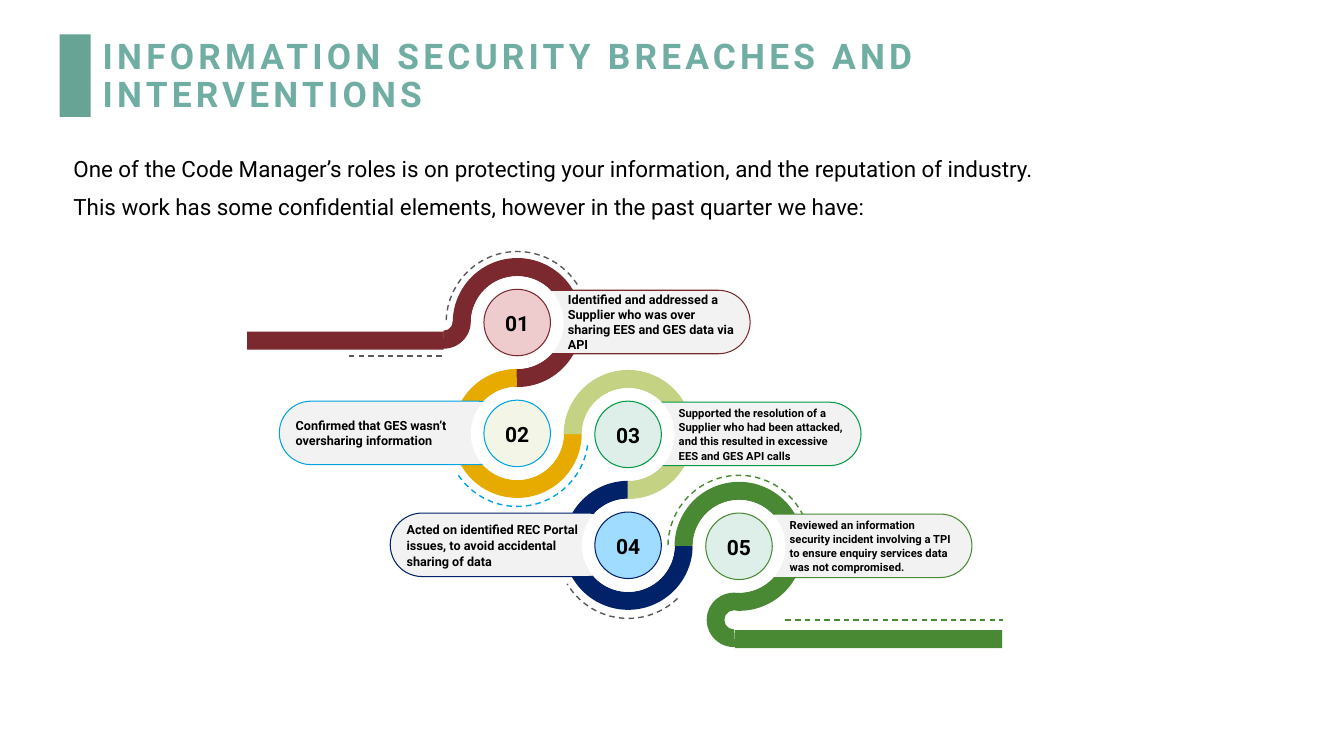
from lxml.etree import SubElement
from pptx import Presentation
from pptx.dml.color import RGBColor
from pptx.enum.dml import MSO_LINE
from pptx.enum.shapes import MSO_CONNECTOR, MSO_SHAPE
from pptx.enum.text import MSO_ANCHOR, PP_ALIGN
from pptx.oxml.ns import qn
from pptx.util import Inches, Pt

BLACK = RGBColor(0x00, 0x00, 0x00)
WHITE = RGBColor(0xFF, 0xFF, 0xFF)
PALE = RGBColor(0xF2, 0xF2, 0xF2)
GREY = RGBColor(0x59, 0x59, 0x59)
TEAL = RGBColor(0x68, 0xA4, 0x95)
MINT = RGBColor(0x70, 0xAD, 0xA3)
WINE = RGBColor(0x7B, 0x28, 0x2E)
PINK = RGBColor(0xEE, 0xCB, 0xCD)
GOLD = RGBColor(0xE7, 0xAB, 0x00)
CREAM = RGBColor(0xF3, 0xF6, 0xE6)
SKY = RGBColor(0x00, 0xA3, 0xE0)
LIME = RGBColor(0xC4, 0xD3, 0x83)
GREEN = RGBColor(0x00, 0x9A, 0x44)
ICE = RGBColor(0xDD, 0xEF, 0xE8)
NAVY = RGBColor(0x01, 0x21, 0x69)
BLUE = RGBColor(0xA0, 0xDC, 0xFF)
MOSS = RGBColor(0x49, 0x89, 0x34)

TITLE = "INFORMATION SECURITY BREACHES AND INTERVENTIONS"
INTRO = [
    "One of the Code Manager’s roles is on protecting your information, "
    "and the reputation of industry.\u00a0",
    "This work has some confidential elements, however in the past quarter we have:",
]
# road, edge, disc, text size, line spacing, right inset of a left pill, text
STEPS = [
    (WINE, WINE, PINK, 9, 1, 0,
     "Identified and addressed a Supplier who was over sharing EES and GES data via API"),
    (GOLD, SKY, CREAM, 9, 1, 0.23,
     "Confirmed that GES wasn’t oversharing information"),
    (LIME, GREEN, ICE, 8, 1.06, 0,
     "Supported the resolution of a Supplier who had been attacked, "
     "and this resulted in excessive EES and GES API calls"),
    (NAVY, NAVY, BLUE, 9, 1.06, 0.3,
     "Acted on identified REC Portal issues, to avoid accidental sharing of data"),
    (MOSS, MOSS, ICE, 8, 1.06, 0,
     "Reviewed an information security incident involving a TPI "
     "to ensure enquiry services data was not compromised."),
]
# step, colour, start and end angle, shift down
DASHES = [(1, SKY, 8, 148, 0.02), (4, MOSS, 181, 333, 0),
          (0, GREY, 182, 331, 0), (3, GREY, 46, 149, 0.02)]


def style(item, values):
    for name, value in values.items():
        setattr(item, name, value)


def shape(slide, kind, box, fill=None, edge=None, width=0.75, adjust=()):
    part = slide.shapes.add_shape(kind, *map(Inches, box))
    part.shadow.inherit = False
    for i, value in enumerate(adjust):
        part.adjustments[i] = value
    if fill is None:
        part.fill.background()
    else:
        part.fill.solid()
        part.fill.fore_color.rgb = fill
    if edge is None:
        part.line.fill.background()
    else:
        part.line.color.rgb = edge
        part.line.width = Pt(width)
    return part


def round_box(cx, cy, size):
    """Square box around a centre."""
    return cx - size / 2, cy - size / 2, size, size


def turns(start, end):
    """Arc angles in degrees as adjustment values."""
    return start * 0.6, end * 0.6


def write(part, lines, size, color=BLACK, bold=True, spacing=1.0, gap=0,
          align=PP_ALIGN.LEFT, anchor=MSO_ANCHOR.MIDDLE, wrap=True, insets=None):
    frame = part.text_frame
    style(frame, {"word_wrap": wrap, "vertical_anchor": anchor})
    if insets:
        sides = ("margin_left", "margin_top", "margin_right", "margin_bottom")
        style(frame, dict(zip(sides, map(Inches, insets))))
    for i, line in enumerate(lines):
        para = frame.add_paragraph() if i else frame.paragraphs[0]
        style(para, {"alignment": align, "line_spacing": spacing,
                     "space_before": Pt(gap if i else 0)})
        run = para.add_run()
        run.text = line
        style(run.font, {"name": "Roboto", "size": Pt(size), "bold": bold})
        run.font.color.rgb = color
    return frame


def header(slide, box):
    x, y, w, h = box
    shape(slide, MSO_SHAPE.RECTANGLE, (x, y, 0.31, h), TEAL)
    label = slide.shapes.add_textbox(
        *map(Inches, (x + 0.33, y + 0.06, w - 0.33, 0.72)))
    frame = write(label, [TITLE], 25.2, MINT, spacing=0.9)
    run = frame.paragraphs[0].runs[0]
    run._r.get_or_add_rPr().set("spc", "300")


def intro(slide, box):
    label = slide.shapes.add_textbox(*map(Inches, box))
    write(label, INTRO, 16, bold=False, spacing=0.9, gap=10, anchor=MSO_ANCHOR.TOP)


def center(box, i):
    """Steps zigzag: down, then right, with a slight drop per column."""
    col, row = i // 2, (i + 1) // 2
    return box[0] + 2.68 + 1.1 * col, box[1] + 0.71 + 1.1 * row + 0.01 * col


def step(slide, box, i):
    road, edge, disc, size, spacing, inset, text = STEPS[i]
    cx, cy = center(box, i)
    left = i % 2 == 1
    arc = (*turns(0, 269.5), 0.138) if left else (*turns(180.4, 92.2), 0.141)
    shape(slide, MSO_SHAPE.BLOCK_ARC, round_box(cx, cy, 1.28), road, adjust=arc)
    px = cx - 2.36 if left else cx + 0.03
    pill = shape(slide, MSO_SHAPE.ROUNDED_RECTANGLE, (px, cy - 0.32, 2.28, 0.63),
                 PALE, edge, adjust=[0.5])
    insets = (0.07, 0.07, inset, 0.07) if left else (0.38, 0.07, 0.07, 0.07)
    write(pill, [text], size, spacing=spacing, insets=insets)
    shape(slide, MSO_SHAPE.OVAL, round_box(cx, cy, 0.92), WHITE)
    badge = shape(slide, MSO_SHAPE.OVAL, round_box(cx, cy, 0.66), disc, edge)
    write(badge, [f"{i + 1:02}"], 15, spacing=1.06, align=PP_ALIGN.CENTER,
          wrap=False, insets=[0.07] * 4)


def road_end(slide, box, color, bar, bend, arc):
    """Straight bar (left, top, width) and the bend (left, top) that joins it."""
    x, y = box[:2]
    shape(slide, MSO_SHAPE.RECTANGLE, (x + bar[0], y + bar[1], bar[2], 0.18), color)
    shape(slide, MSO_SHAPE.BLOCK_ARC, (x + bend[0], y + bend[1], 0.54, 0.54),
          color, adjust=arc)


def dash_line(slide, box, color, start, end, drop):
    x, y = box[:2]
    line = slide.shapes.add_connector(
        MSO_CONNECTOR.STRAIGHT,
        *map(Inches, (x + start, y + drop, x + end, y + drop)))
    line.line.color.rgb = color
    style(line.line, {"width": Pt(1), "dash_style": MSO_LINE.DASH})
    SubElement(line._element.spPr, qn("a:effectLst"))


def roadmap(slide, box):
    for i in range(len(STEPS)):
        step(slide, box, i)
    road_end(slide, box, WINE, (0, 0.8, 1.95), (1.68, 0.43),
             (*turns(356.4, 91.1), 0.331))
    road_end(slide, box, MOSS, (4.84, 3.76, 2.65), (4.56, 3.39),
             (*turns(87.6, 285.5), 0.324))
    for i, color, start, end, drop in DASHES:
        cx, cy = center(box, i)
        arc = shape(slide, MSO_SHAPE.ARC, round_box(cx, cy + drop, 1.41),
                    edge=color, width=1, adjust=turns(start, end))
        arc.line.dash_style = MSO_LINE.DASH
    dash_line(slide, box, MOSS, 5.34, 7.5, 3.66)
    dash_line(slide, box, GREY, 1.01, 1.95, 1.04)


def main():
    deck = Presentation()
    style(deck, {"slide_width": Inches(13.33), "slide_height": Inches(7.5)})
    slide = deck.slides.add_slide(deck.slide_layouts[6])
    header(slide, (0.59, 0.34, 10.48, 0.82))
    intro(slide, (0.63, 1.52, 10.87, 5.05))
    roadmap(slide, (2.45, 2.49, 7.5, 3.94))
    deck.save("out.pptx")


if __name__ == "__main__":
    main()
